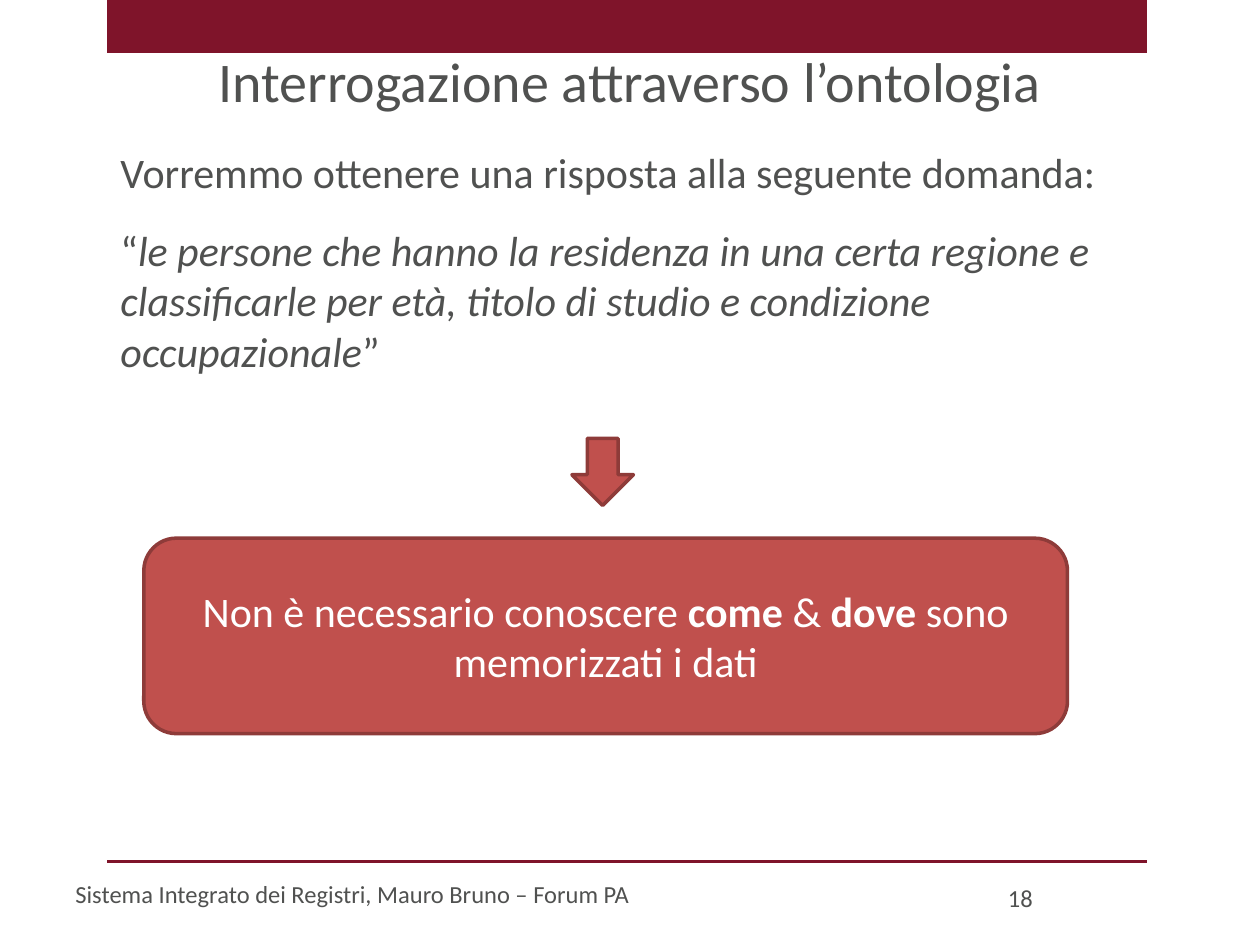
from lxml.etree import SubElement
from pptx import Presentation
from pptx.dml.color import RGBColor
from pptx.enum.shapes import MSO_CONNECTOR, MSO_SHAPE
from pptx.enum.text import MSO_ANCHOR, PP_ALIGN
from pptx.oxml.ns import qn
from pptx.util import Cm, Pt

INK = {"wine": "7F142A", "gray": "505150", "red": "C0504D",
       "edge": "8E3B39", "white": "FFFFFF"}
FONT = "Calibri"


def tint(name):
    return RGBColor.from_string(INK[name])


def add_runs(para, runs, size, ink="gray", align=PP_ALIGN.LEFT):
    para.alignment = align
    for text, style in runs:
        run = para.add_run()
        run.text = text
        font = run.font
        font.name, font.size = FONT, Pt(size)
        font.color.rgb = tint(ink)
        font.bold = style == "b"
        font.italic = style == "i"


def add_shape(slide, kind, box, fill, edge=None):
    shape = slide.shapes.add_shape(kind, *map(Cm, box))
    shape.shadow.inherit = False
    shape.fill.solid()
    shape.fill.fore_color.rgb = tint(fill)
    if edge:
        shape.line.color.rgb = tint(edge)
        shape.line.width = Pt(2)
    else:
        shape.line.fill.background()
    return shape


def add_text(slide, box, paras, size, gap=0):
    frame = slide.shapes.add_textbox(*map(Cm, box)).text_frame
    frame.word_wrap = True
    for i, runs in enumerate(paras):
        para = frame.add_paragraph() if i else frame.paragraphs[0]
        if i:
            para.space_before = Pt(gap)
        add_runs(para, runs, size)


def add_frame(slide, box):
    x, y, w, h = box
    add_shape(slide, MSO_SHAPE.RECTANGLE, (x, y, w, 1.07), "wine")
    rule = slide.shapes.add_connector(
        MSO_CONNECTOR.STRAIGHT, Cm(x), Cm(y + h), Cm(x + w), Cm(y + h))
    rule.line.color.rgb = tint("wine")
    rule.line.width = Pt(2)
    SubElement(rule._element.spPr, qn("a:effectLst"))


def add_title(slide, box):
    title = slide.shapes.title
    title.left, title.top, title.width, title.height = map(Cm, box)
    frame = title.text_frame
    frame.vertical_anchor = MSO_ANCHOR.TOP
    add_runs(frame.paragraphs[0], [("Interrogazione attraverso l’ontologia", "")],
             32, align=PP_ALIGN.CENTER)


def add_query(slide, box):
    add_text(slide, box, [
        [("Vorremmo ottenere una risposta alla seguente domanda:", "")],
        [("“", ""),
         ("le persone che hanno la residenza in una certa regione e "
          "classificarle per età, titolo di studio e condizione occupazionale", "i"),
         ("”", "")],
    ], 24, 16)


def add_answer(slide, box):
    x, y, w, h = box
    add_shape(slide, MSO_SHAPE.DOWN_ARROW, (x + 8.63, y, 1.24, 1.35), "red", "edge")
    card = add_shape(slide, MSO_SHAPE.ROUNDED_RECTANGLE,
                     (x, y + 2.01, w, h - 2.01), "red", "edge")
    frame = card.text_frame
    frame.word_wrap = True
    frame.vertical_anchor = MSO_ANCHOR.MIDDLE
    add_runs(frame.paragraphs[0], [
        ("Non è necessario conoscere ", ""), ("come ", "b"), ("& ", ""),
        ("dove ", "b"), ("sono memorizzati i dati", "")],
        24, "white", PP_ALIGN.CENTER)


def add_footer(slide, box):
    x, y, w, h = box
    add_text(slide, (x, y, 16.41, h),
             [[("Sistema Integrato dei Registri, Mauro Bruno – Forum PA", "")]], 14)
    add_text(slide, (x + w - 1.8, y + 0.08, 1.8, h), [[("18", "")]], 14)


def main():
    deck = Presentation()
    deck.slide_width, deck.slide_height = Cm(25.4), Cm(19.05)
    slide = deck.slides.add_slide(deck.slide_layouts[5])
    add_frame(slide, (2.16, 0, 20.96, 17.37))
    add_title(slide, (1.27, 0.81, 22.86, 3.18))
    add_query(slide, (2.18, 2.82, 20.96, 5.61))
    add_footer(slide, (1.27, 17.6, 20.6, 1.02))
    add_answer(slide, (2.9, 8.84, 18.62, 5.95))
    deck.save("out.pptx")


if __name__ == "__main__":
    main()
